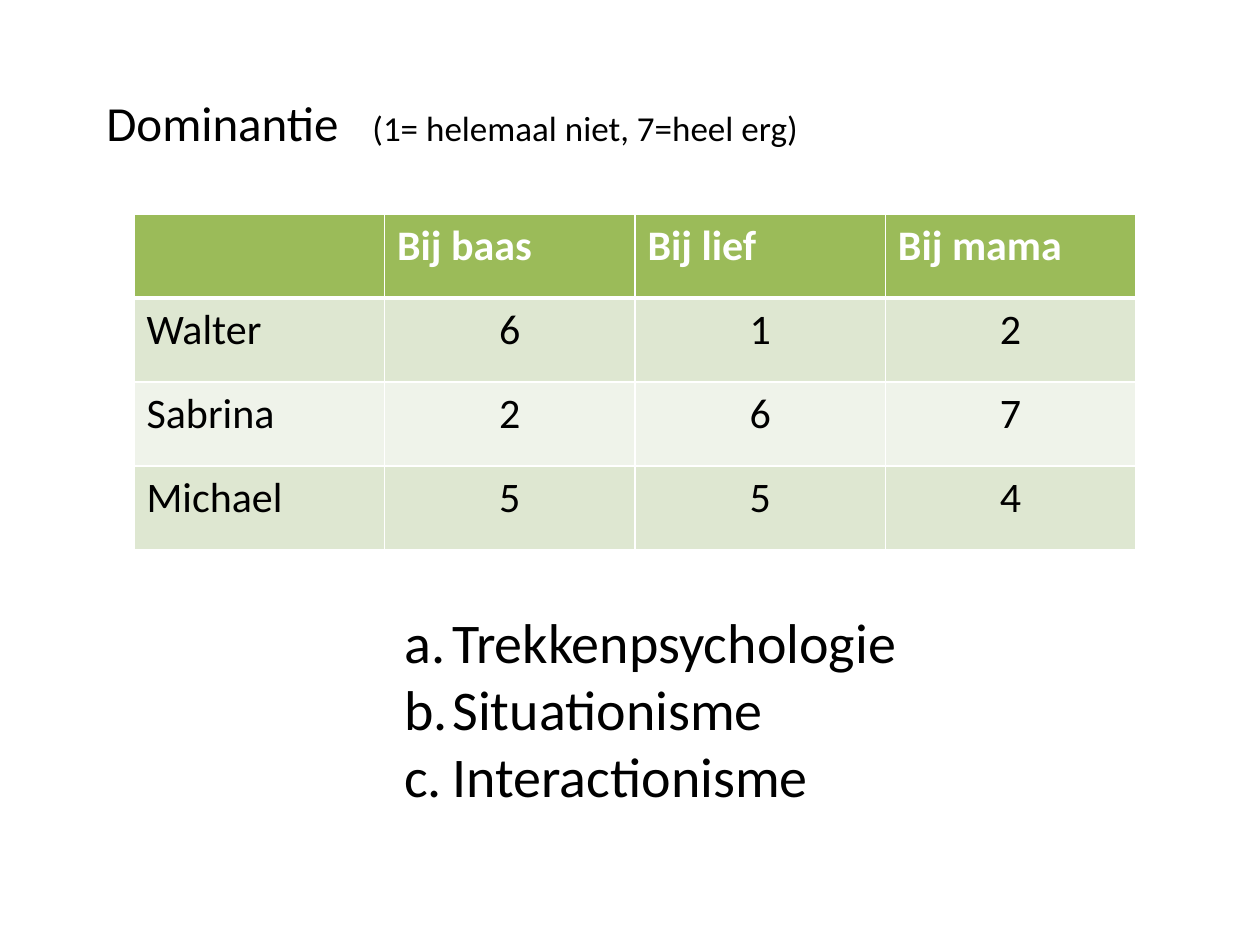
"""Build a slide with a dominance score table and three answer options."""
import pptx
import pptx.dml.color
import pptx.enum.text
import pptx.oxml.ns
import pptx.util
from lxml import etree

RGB = pptx.dml.color.RGBColor
BLACK = RGB(0x00, 0x00, 0x00)
WHITE = RGB(0xFF, 0xFF, 0xFF)
GREEN = RGB(0x9B, 0xBB, 0x59)
PALE = RGB(0xDE, 0xE7, 0xD1)
LIGHT = RGB(0xEF, 0xF3, 0xEA)
LEFT = pptx.enum.text.PP_ALIGN.LEFT
CENTER = pptx.enum.text.PP_ALIGN.CENTER
SCALE = 914400 / 126


def px(*sizes):
    return [round(size * SCALE) for size in sizes]


def write(para, text, size=24, color=BLACK, bold=False, align=LEFT):
    para.alignment = align
    run = para.add_run()
    run.text = text
    run.font.name = "Calibri"
    run.font.size = pptx.util.Pt(size)
    run.font.bold = bold
    run.font.color.rgb = color


qn = pptx.oxml.ns.qn
deck = pptx.Presentation()
deck.slide_width, deck.slide_height = px(1260, 945)
slide = deck.slides.add_slide(deck.slide_layouts[6])

frame = slide.shapes.add_textbox(*px(392, 601, 645, 217)).text_frame
frame.word_wrap = True
indent = px(48)[0]
for i, option in enumerate(["Trekkenpsychologie", "Situationisme", "Interactionisme"]):
    para = frame.add_paragraph() if i else frame.paragraphs[0]
    write(para, option, size=32)
    props = para._p.get_or_add_pPr()
    props.set("marL", str(indent))
    props.set("indent", str(-indent))
    etree.SubElement(props, qn("a:buFont"), typeface="+mj-lt")
    etree.SubElement(props, qn("a:buAutoNum"), type="alphaLcPeriod")

frame = slide.shapes.add_textbox(*px(94, 86, 814, 72)).text_frame
frame.word_wrap = True
title = frame.paragraphs[0]
write(title, "Dominantie\t", size=28)
write(title, "(1= helemaal niet, 7=heel erg)", size=20)
tabs = etree.SubElement(title._p.get_or_add_pPr(), qn("a:tabLst"))
etree.SubElement(tabs, qn("a:tab"), pos=str(px(266)[0]), algn="l")

rows = [
    ["", "Bij baas", "Bij lief", "Bij mama"],
    ["Walter", "6", "1", "2"],
    ["Sabrina", "2", "6", "7"],
    ["Michael", "5", "5", "4"],
]
table = slide.shapes.add_table(4, 4, *px(134, 214, 1002, 336)).table
for r, row in enumerate(rows):
    for c, text in enumerate(row):
        cell = table.cell(r, c)
        head = r == 0
        props = cell._tc.get_or_add_tcPr()
        for side in "LRTB":
            thick = (r, side) in [(0, "B"), (1, "T")]
            width = pptx.util.Pt(3 if thick else 1)
            line = etree.SubElement(props, qn("a:ln" + side), w=str(width))
            fill = etree.SubElement(line, qn("a:solidFill"))
            etree.SubElement(fill, qn("a:srgbClr"), val=str(WHITE))
        cell.fill.solid()
        cell.fill.fore_color.rgb = GREEN if head else PALE if r % 2 else LIGHT
        write(cell.text_frame.paragraphs[0], text, bold=head,
              color=WHITE if head else BLACK,
              align=CENTER if r and c else LEFT)

deck.save("out.pptx")
